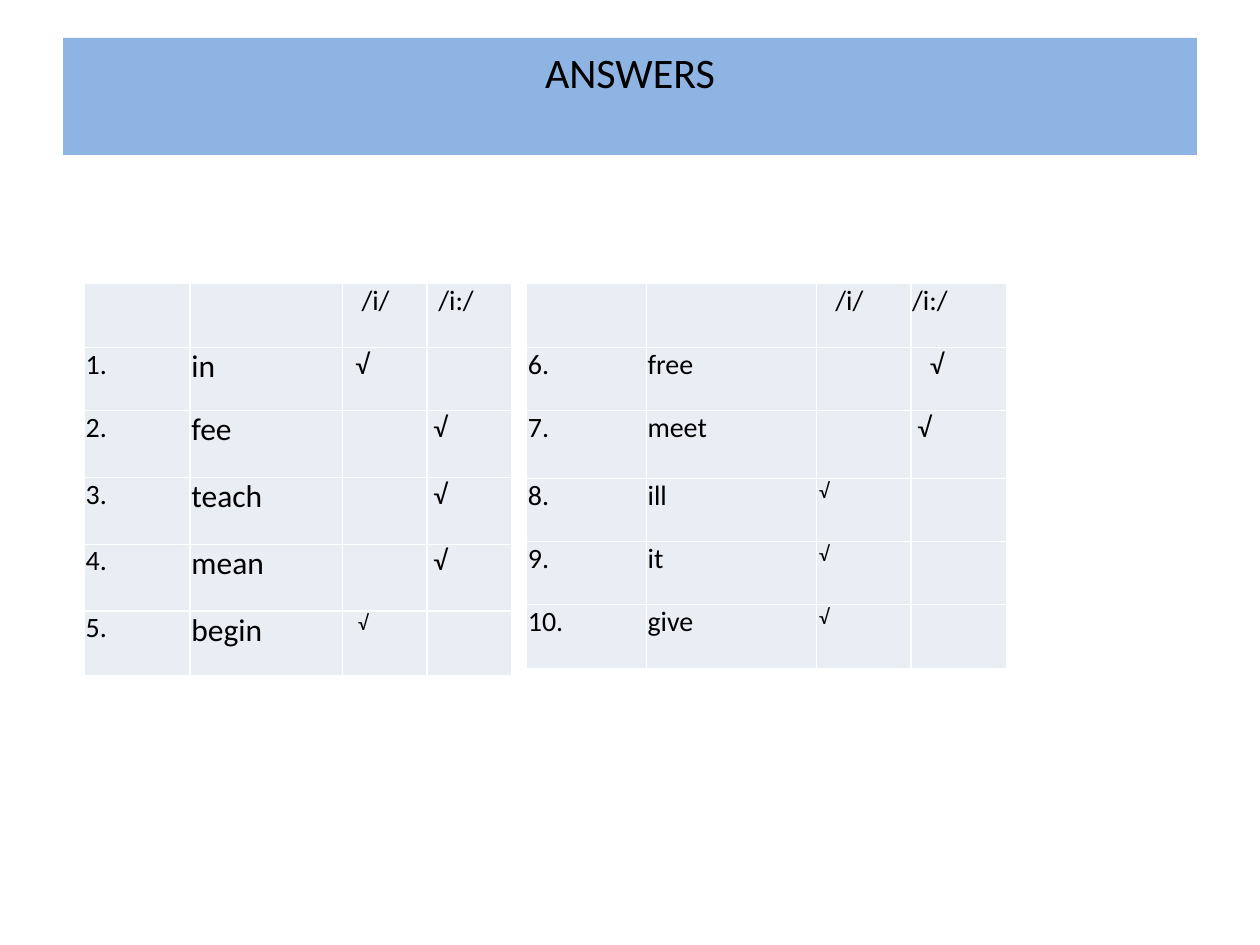
from lxml import etree
from pptx import Presentation
from pptx import util as u
from pptx.dml.color import RGBColor
from pptx.enum import text
from pptx.oxml import ns

COLORS = {"banner": "8EB4E3", "cell": "E9EDF4", "border": "FFFFFF", "text": "000000"}
FONT = "Calibri"
CHECK = "√"
INSET = 0.01
SHORT, LONG = 2, 3  # columns of the two vowels

# Each answer: word, vowel column, size of the check mark, indent of the check mark
FIRST_ANSWERS = [
    ("in", SHORT, 16, 0.1),
    ("fee", LONG, 16, 0.05),
    ("teach", LONG, 16, 0.05),
    ("mean", LONG, 16, 0.05),
    ("begin", SHORT, 12, 0.12),
]
SECOND_ANSWERS = [
    ("free", LONG, 16, 0.15),
    ("meet", LONG, 16, 0.05),
    ("ill", SHORT, 12, 0.02),
    ("it", SHORT, 12, 0.02),
    ("give", SHORT, 12, 0.02),
]


def color(name):
    return RGBColor.from_string(COLORS[name])


def style_text(paragraph, size):
    paragraph.font.name = FONT
    paragraph.font.size = u.Pt(size)
    paragraph.font.color.rgb = color("text")


def add_borders(cell):
    properties = cell._tc.get_or_add_tcPr()
    for index, side in enumerate(("lnL", "lnR", "lnT", "lnB")):
        line = etree.Element(ns.qn(f"a:{side}"), w=str(u.Pt(1)))
        fill = etree.SubElement(line, ns.qn("a:solidFill"))
        etree.SubElement(fill, ns.qn("a:srgbClr"), val=COLORS["border"])
        properties.insert(index, line)


def write_cell(cell, words, size=16, indent=INSET):
    cell.text = words
    cell.margin_left = u.Inches(indent)
    style_text(cell.text_frame.paragraphs[0], size)


def add_title(slide, left, top, width, height):
    title = slide.shapes.title
    title.left, title.top = u.Inches(left), u.Inches(top)
    title.width, title.height = u.Inches(width), u.Inches(height)
    title.fill.solid()
    title.fill.fore_color.rgb = color("banner")
    frame = title.text_frame
    frame.text = "ANSWERS"
    frame.vertical_anchor = text.MSO_ANCHOR.TOP
    frame.margin_top = u.Inches(0.07)
    frame.paragraphs[0].alignment = text.PP_ALIGN.CENTER
    style_text(frame.paragraphs[0], 24)


def add_answer_table(slide, left, top, columns, rows, answers, first_number,
                     word_size, header_indents):
    frame = slide.shapes.add_table(
        len(rows), len(columns), u.Inches(left), u.Inches(top),
        u.Inches(sum(columns)), u.Inches(sum(rows)))
    table = frame.table
    table.first_row = table.horz_banding = False
    for column, width in zip(table.columns, columns):
        column.width = u.Inches(width)
    for row, height in zip(table.rows, rows):
        row.height = u.Inches(height)

    for cell in table.iter_cells():
        cell.margin_left = cell.margin_right = u.Inches(INSET)
        cell.margin_top = cell.margin_bottom = 0
        cell.fill.solid()
        cell.fill.fore_color.rgb = color("cell")
        add_borders(cell)

    for column, vowel, indent in zip((SHORT, LONG), ("/i/", "/i:/"), header_indents):
        write_cell(table.cell(0, column), vowel, indent=indent)
    for row, (word, vowel, size, indent) in enumerate(answers, start=1):
        write_cell(table.cell(row, 0), f"{first_number + row - 1}.")
        write_cell(table.cell(row, 1), word, word_size)
        write_cell(table.cell(row, vowel), CHECK, size, indent)


def main():
    presentation = Presentation()
    presentation.slide_width, presentation.slide_height = u.Inches(10), u.Inches(7.5)
    slide = presentation.slides.add_slide(presentation.slide_layouts[5])
    add_title(slide, 0.5, 0.3, 9, 0.93)
    add_answer_table(slide, 0.67, 2.25, [0.84, 1.21, 0.67, 0.67],
                     [0.51, 0.5, 0.53, 0.53, 0.53, 0.51],
                     FIRST_ANSWERS, 1, 18, (0.15, 0.09))
    add_answer_table(slide, 4.18, 2.25, [0.95, 1.35, 0.75, 0.76],
                     [0.51, 0.5, 0.54, 0.5, 0.5, 0.51],
                     SECOND_ANSWERS, 6, 16, (0.15, INSET))
    presentation.save("out.pptx")


if __name__ == "__main__":
    main()
